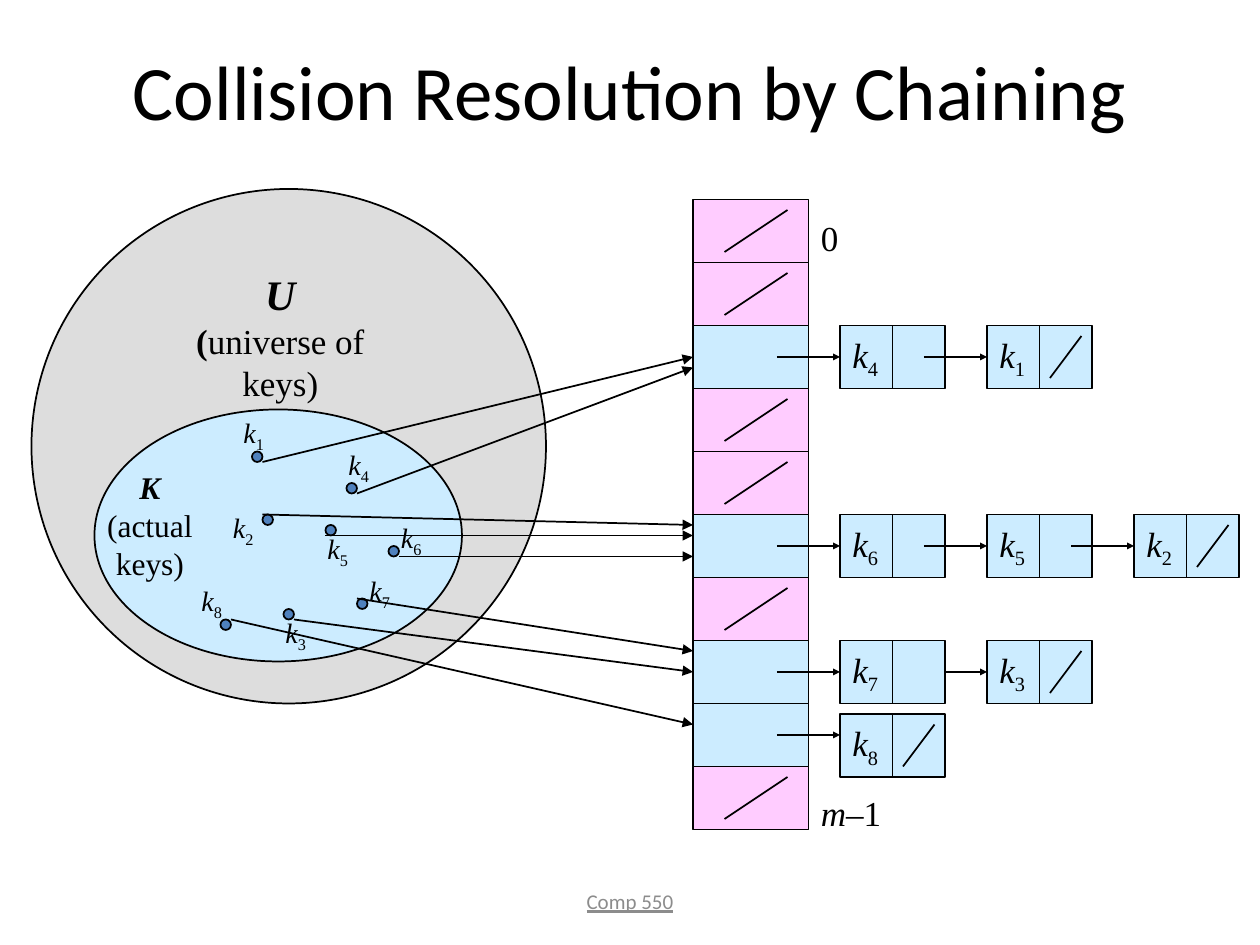
from dataclasses import dataclass

from lxml import etree
from pptx import Presentation
from pptx import util as u
from pptx.dml.color import RGBColor
from pptx.enum import shapes, text
from pptx.oxml.ns import qn

COLS, ROWS = 120, 90          # slide grid: twelve units to the inch
LEFT, TOP, WIDE, HIGH = 66, 19, 11, 6      # hash table slots
FIRST, STEP, NODE = 80, 14, 10             # chain nodes
SLOTS = 10
BLUE, PINK, GREY, DOT, BLACK = "CCECFF", "FFCCFF", "DDDDDD", "4F81BD", "000000"
SERIF, SANS = "Times New Roman", "Calibri"
RECT, OVAL = shapes.MSO_SHAPE.RECTANGLE, shapes.MSO_SHAPE.OVAL
MID = text.PP_ALIGN.CENTER


@dataclass
class Key:
    num: int
    dot: tuple[int, int]
    label: tuple[int, int]
    start: tuple[int, int]
    slot: int
    end: int      # row where the arrow meets the table


@dataclass
class Chain:
    slot: int
    keys: list[int]
    drop: int = 0            # rows by which nodes sit below the slot
    joined: bool = False     # arrows start at the node's edge


KEYS = [
    Key(1, (24, 43), (22, 39), (25, 44), 2, 34),
    Key(4, (33, 46), (32, 42), (34, 47), 2, 35),
    Key(2, (25, 49), (21, 48), (25, 49), 5, 50),
    Key(5, (31, 50), (30, 50), (31, 51), 5, 51),
    Key(6, (37, 52), (37, 49), (38, 53), 5, 53),
    Key(7, (34, 57), (34, 54), (34, 57), 7, 62),
    Key(3, (27, 58), (26, 58), (28, 59), 7, 64),
    Key(8, (21, 59), (18, 55), (22, 59), 8, 69),
]
CHAINS = [
    Chain(2, [4, 1]),
    Chain(5, [6, 5, 2]),
    Chain(7, [7, 3], joined=True),
    Chain(8, [8], drop=1),
]


def grid(n: float) -> int:
    return u.Inches(n / 12)


def tint(hue: str) -> RGBColor:
    return RGBColor.from_string(hue)


def style(para, size: float, face: str = SERIF, hue: str = BLACK) -> None:
    para.font.size, para.font.name = u.Pt(size), face
    para.font.color.rgb = tint(hue)


def add(para, word: str, bold: bool = False, slant: bool = False):
    run = para.add_run()
    run.text, run.font.bold, run.font.italic = word, bold, slant
    return run


def shape(slide, kind, x: float, y: float, w: float, h: float, hue: str):
    item = slide.shapes.add_shape(kind, grid(x), grid(y), grid(w), grid(h))
    item.shadow.inherit = False
    item.fill.solid()
    item.fill.fore_color.rgb = tint(hue)
    item.line.color.rgb = tint(BLACK)
    item.line.width = u.Pt(1)
    return item


def box(slide, x: float, y: float, w: float, h: float, wrap: bool = False):
    frame = slide.shapes.add_textbox(grid(x), grid(y), grid(w), grid(h)).text_frame
    frame.word_wrap = wrap
    if not wrap:
        frame.auto_size = text.MSO_AUTO_SIZE.SHAPE_TO_FIT_TEXT
    return frame


def line(slide, x: float, y: float, x2: float, y2: float, head: str = ""):
    """Draw a line; head is the arrowhead size, 'sm' or 'med'."""
    item = slide.shapes.add_connector(
        shapes.MSO_CONNECTOR.STRAIGHT, grid(x), grid(y), grid(x2), grid(y2))
    item.line.color.rgb = tint(BLACK)
    item.line.width = u.Pt(1)
    if head:
        etree.SubElement(item.line._get_or_add_ln(), qn("a:tailEnd"),
                         type="triangle", w=head, len=head)
    etree.SubElement(item._element.spPr, qn("a:effectLst"))
    return item


def name(para, num: int, size: float) -> None:
    """Write an italic k with a subscript number."""
    style(para, size)
    para.alignment = text.PP_ALIGN.LEFT
    add(para, "k", slant=True)
    add(para, str(num))._r.get_or_add_rPr().set("baseline", "-25000")


def slash(slide, x: float, y: float, run: float) -> None:
    """Mark an empty pointer; x is its right end."""
    line(slide, x, y + 1, x - run, y + 5)


def table(slide) -> list:
    used = {chain.slot for chain in CHAINS}
    cells = []
    for i in range(SLOTS):
        y = TOP + i * HIGH
        hue = BLUE if i in used else PINK
        cells.append(shape(slide, RECT, LEFT, y, WIDE, HIGH, hue))
        if i not in used:
            slash(slide, LEFT + 9, y, 6)
    return cells


def marks(slide) -> None:
    """Number the first and last slots."""
    for y, letter, digit in ((20, "", "0"), (74.8, "m", "–1")):
        para = box(slide, LEFT + WIDE, y, 10, 5).paragraphs[0]
        style(para, 20)
        if letter:
            add(para, letter, slant=True)
        add(para, digit)


def sets(slide) -> None:
    shape(slide, OVAL, 3, 18, 49, 49, GREY)
    shape(slide, OVAL, 9, 39, 35, 24, BLUE)
    whole = box(slide, 14.2, 25, 25, 10, True)
    actual = box(slide, 7.28, 44, 14, 12, True)
    for frame, letter, big, small, rows in (
        (whole, "U", 24, 20, [("(", "universe of keys)")]),
        (actual, "K", 18, 18, [("", "(actual"), ("", "keys)")]),
    ):
        para = frame.paragraphs[0]
        style(para, big)
        para.alignment = MID
        add(para, letter, bold=True, slant=True)
        for heavy, plain in rows:
            para = frame.add_paragraph()
            style(para, small)
            para.alignment = MID
            if heavy:
                add(para, heavy, bold=True)
            add(para, plain)


def hashes(slide, cells: list) -> None:
    for key in KEYS:
        shape(slide, OVAL, *key.dot, 1, 1, DOT)
        name(box(slide, *key.label, 4.5, 4.5).paragraphs[0], key.num, 16)
    for key in KEYS:
        arrow = line(slide, *key.start, LEFT, key.end, "med")
        if key.end == TOP + key.slot * HIGH + HIGH / 2:
            arrow.end_connect(cells[key.slot], 1)


def lists(slide) -> None:
    for chain in CHAINS:
        top = TOP + chain.slot * HIGH
        mid, y = top + HIGH / 2, top + chain.drop
        prior = None
        for i, num in enumerate(chain.keys):
            x = FIRST + i * STEP
            node = shape(slide, RECT, x, y, NODE, HIGH, BLUE)
            node.text_frame.vertical_anchor = text.MSO_ANCHOR.MIDDLE
            name(node.text_frame.paragraphs[0], num, 20)
            line(slide, x + NODE / 2, y, x + NODE / 2, y + HIGH)
            arrow = line(slide, x - 6, mid, x, mid, "sm")
            if prior and chain.joined:
                arrow.begin_connect(prior, 3)
            if not chain.drop:
                arrow.end_connect(node, 1)
            prior = node
        slash(slide, x + 9, y, 3)


def main() -> None:
    deck = Presentation()
    deck.slide_width, deck.slide_height = grid(COLS), grid(ROWS)
    slide = deck.slides.add_slide(deck.slide_layouts[5])
    title = slide.shapes.title
    title.left, title.top, title.width, title.height = map(grid, (6, 1, 108, 15))
    title.text_frame.text = "Collision Resolution by Chaining"
    title.text_frame.vertical_anchor = text.MSO_ANCHOR.MIDDLE
    style(title.text_frame.paragraphs[0], 44, SANS)
    title.text_frame.paragraphs[0].alignment = MID
    cells = table(slide)
    marks(slide)
    sets(slide)
    hashes(slide, cells)
    lists(slide)
    foot = box(slide, 41, 83.4, 38, 4.8, True)
    foot.vertical_anchor = text.MSO_ANCHOR.MIDDLE
    para = foot.paragraphs[0]
    para.text, para.alignment = "Comp 550", MID
    style(para, 12, SANS, "8C8C8C")
    para.font.underline = True
    deck.save("out.pptx")


if __name__ == "__main__":
    main()
